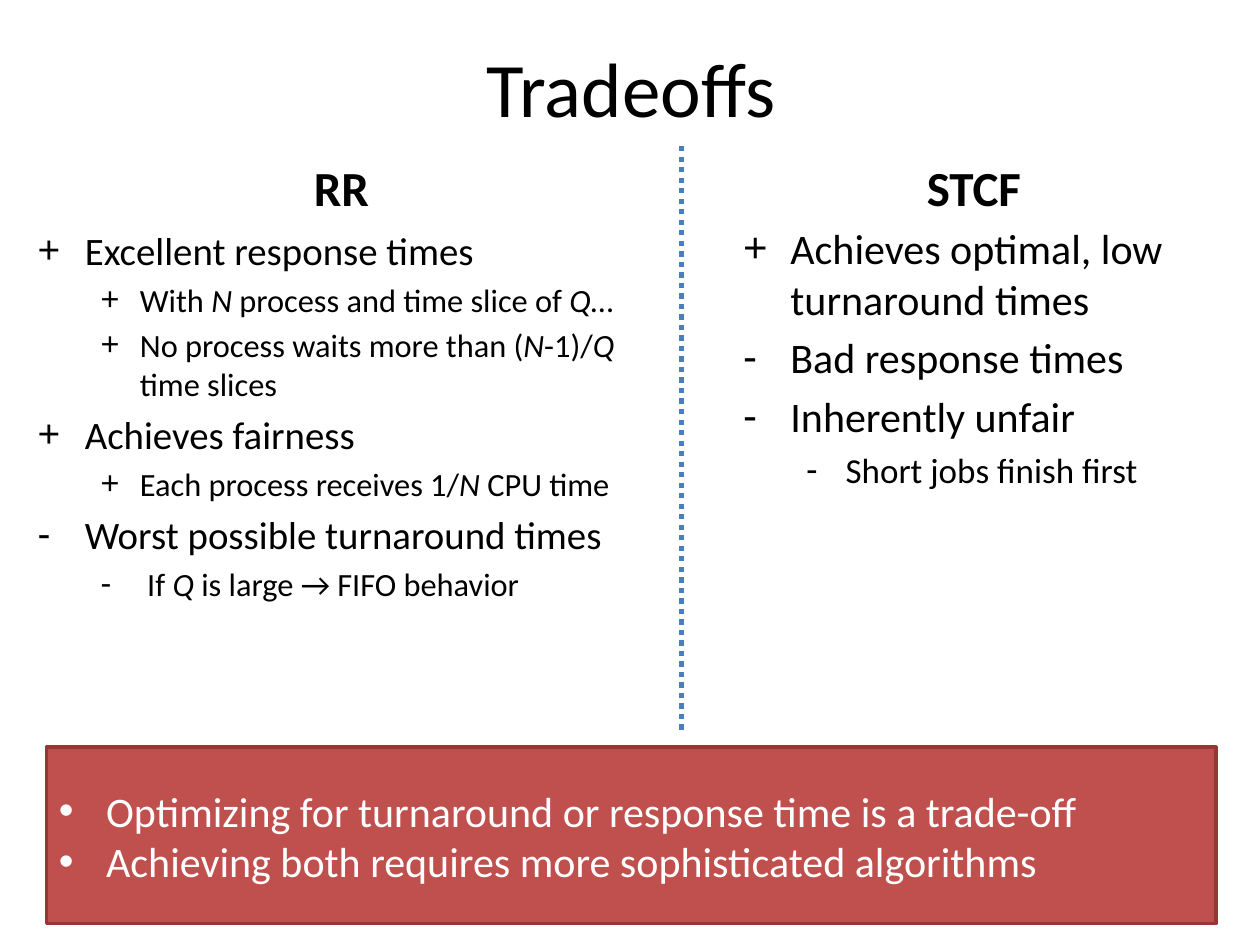
from dataclasses import dataclass

from lxml import etree
from pptx import Presentation
from pptx import util as u
from pptx.dml.color import RGBColor
from pptx.enum import dml, shapes, text
from pptx.oxml import ns


@dataclass(frozen=True)
class Theme:
    font: str = "Calibri"
    ink: str = "000000"
    light: str = "FFFFFF"
    divider: str = "4B7EBC"
    banner: str = "C0504D"
    banner_edge: str = "953735"
    title: float = 44
    heading: float = 28
    left_sizes: tuple = (22.2, 18.5)
    right_sizes: tuple = (24, 20)
    banner_size: float = 24


THEME = Theme()
# Left margin and hanging indent in points, by outline level
INDENTS = ((27, 27), (58.5, 22.5))

# Each item: level, bullet, text pieces; every second piece is italic
RR_POINTS = [
    (0, "+", ["Excellent response times"]),
    (1, "+", ["With ", "N", " process and time slice of ", "Q", "…"]),
    (1, "+", ["No process waits more than (", "N", "-1)/", "Q ", "time slices"]),
    (0, "+", ["Achieves fairness"]),
    (1, "+", ["Each process receives 1/", "N", " CPU time"]),
    (0, "-", ["Worst possible turnaround times"]),
    (1, "-", [" If ", "Q", " is large → FIFO behavior"]),
]
STCF_POINTS = [
    (0, "+", ["Achieves optimal, low turnaround times"]),
    (0, "-", ["Bad response times"]),
    (0, "-", ["Inherently unfair"]),
    (1, "-", ["Short jobs finish first"]),
]
CONCLUSIONS = [
    (0, "•", ["Optimizing for turnaround or response time is a trade-off"]),
    (0, "•", ["Achieving both requires more sophisticated algorithms"]),
]


def points(*lengths):
    return [u.Pt(length) for length in lengths]


def color(code):
    return RGBColor.from_string(code)


def add_run(paragraph, words, size, ink=THEME.ink, bold=False, italic=False):
    run = paragraph.add_run()
    run.text = words
    font = run.font
    font.name, font.size = THEME.font, u.Pt(size)
    font.bold, font.italic = bold, italic
    font.color.rgb = color(ink)


def set_bullet(paragraph, character, level):
    margin, hanging = INDENTS[level]
    properties = paragraph._p.get_or_add_pPr()
    properties.set("marL", str(u.Pt(margin)))
    properties.set("indent", str(-u.Pt(hanging)))
    etree.SubElement(properties, ns.qn("a:buFont")).set("typeface", "Arial")
    etree.SubElement(properties, ns.qn("a:buChar")).set("char", character)


def fill_list(frame, items, sizes, ink=THEME.ink, spacing=0.2):
    for index, (level, character, pieces) in enumerate(items):
        paragraph = frame.add_paragraph() if index else frame.paragraphs[0]
        paragraph.level = level
        paragraph.alignment = text.PP_ALIGN.LEFT
        paragraph.space_before = u.Pt(sizes[level] * spacing)
        set_bullet(paragraph, character, level)
        for position, words in enumerate(pieces):
            add_run(paragraph, words, sizes[level], ink, italic=position % 2 == 1)


def add_frame(slide, box, anchor=text.MSO_ANCHOR.TOP):
    frame = slide.shapes.add_textbox(*points(*box)).text_frame
    frame.word_wrap = True
    frame.vertical_anchor = anchor
    return frame


def add_heading(slide, box, words, size, anchor, bold=False):
    paragraph = add_frame(slide, box, anchor).paragraphs[0]
    paragraph.alignment = text.PP_ALIGN.CENTER
    add_run(paragraph, words, size, bold=bold)


def add_divider(slide, x, top, bottom):
    line = slide.shapes.add_connector(
        shapes.MSO_CONNECTOR.STRAIGHT, *points(x, top, x, bottom))
    line.line.color.rgb = color(THEME.divider)
    line.line.width = u.Pt(3)
    line.line.dash_style = dml.MSO_LINE.ROUND_DOT
    etree.SubElement(line._element.spPr, ns.qn("a:effectLst"))


def add_banner(slide, box, items):
    shape = slide.shapes.add_shape(shapes.MSO_SHAPE.RECTANGLE, *points(*box))
    shape.shadow.inherit = False
    shape.fill.solid()
    shape.fill.fore_color.rgb = color(THEME.banner)
    shape.line.color.rgb = color(THEME.banner_edge)
    shape.line.width = u.Pt(2)
    frame = shape.text_frame
    frame.word_wrap = True
    frame.vertical_anchor = text.MSO_ANCHOR.MIDDLE
    fill_list(frame, items, [THEME.banner_size], THEME.light, spacing=0)


def main():
    presentation = Presentation()
    presentation.slide_width, presentation.slide_height = points(720, 540)
    slide = presentation.slides.add_slide(presentation.slide_layouts[6])

    # Title
    add_heading(slide, (36.7, 4.3, 648, 90), "Tradeoffs", THEME.title,
                text.MSO_ANCHOR.MIDDLE)

    # Two columns: heading left edge, list box, contents
    columns = [
        ("RR", 36, (14.4, 126, 355.7, 290.9), RR_POINTS, THEME.left_sizes),
        ("STCF", 397.4, (417.6, 123.8, 285.1, 302.4), STCF_POINTS, THEME.right_sizes),
    ]
    for heading, left, box, items, sizes in columns:
        add_heading(slide, (left, 77, 318.2, 50.4), heading, THEME.heading,
                    text.MSO_ANCHOR.BOTTOM, bold=True)
        fill_list(add_frame(slide, box), items, sizes)
    add_divider(slide, 389.5, 83.5, 416.9)

    # Conclusion
    add_banner(slide, (26.6, 427, 668.2, 100.8), CONCLUSIONS)

    presentation.save("out.pptx")


if __name__ == "__main__":
    main()
